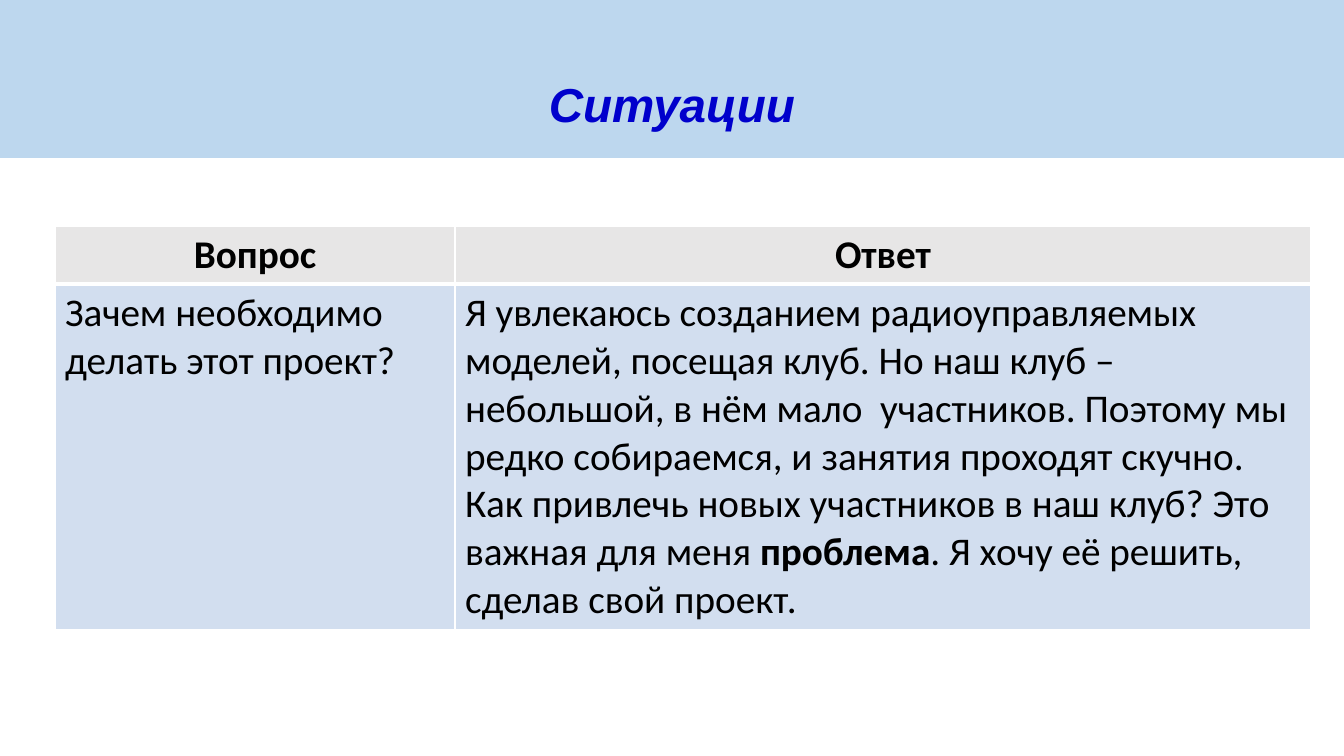
from lxml import etree
from pptx import Presentation
from pptx import util as u
from pptx.dml import color
from pptx.enum import shapes, text
from pptx.oxml import ns

SCALE = 914400 / 100.8
TITLE_FORMAT = {"name": "Arial", "size": u.Pt(34), "bold": True, "italic": True}
CELL_FORMAT = {"name": "Calibri", "size": u.Pt(28)}
BORDERS = {"lnL": 1, "lnR": 1, "lnT": 1, "lnB": 1}
HEADER_BORDERS = {**BORDERS, "lnB": 3}
COLUMNS = [400, 856]
ROWS = [58, 344]
HEADINGS = ["Вопрос", "Ответ"]
QUESTION = [("Зачем необходимо делать этот проект?", False)]
ANSWER = [
    ("Я увлекаюсь созданием радиоуправляемых моделей, посещая клуб. "
     "Но наш клуб – небольшой, в нём мало  участников. Поэтому мы редко "
     "собираемся, и занятия проходят скучно. Как привлечь новых участников "
     "в наш клуб? Это важная для меня ", False),
    ("проблема", True),
    (". Я хочу её решить, сделав свой проект.", False),
]


def px(length):
    """Turn pixels into EMU."""
    return u.Emu(round(length * SCALE))


def rgb(code):
    """Turn a hex string into a colour."""
    return color.RGBColor.from_string(code)


def paint(target, code):
    """Fill a shape or cell with one colour."""
    target.fill.solid()
    target.fill.fore_color.rgb = rgb(code)


def add_span(para, words, code, values):
    """Add a formatted run to a paragraph."""
    span = para.add_run()
    span.text = words
    for name, value in values.items():
        setattr(span.font, name, value)
    span.font.color.rgb = rgb(code)


def add_borders(cell, widths):
    """Draw white borders of the given point widths around a cell."""
    properties = cell._tc.get_or_add_tcPr()
    for side, width in widths.items():
        line = etree.SubElement(properties, ns.qn(f"a:{side}"), w=str(u.Pt(width)))
        fill = etree.SubElement(line, ns.qn("a:solidFill"))
        etree.SubElement(fill, ns.qn("a:srgbClr"), val="FFFFFF")


def title_band(page, left, top, width, height):
    """Place the coloured band with the slide title."""
    box = page.shapes.add_shape(
        shapes.MSO_SHAPE.RECTANGLE, px(left), px(top), px(width), px(height))
    box.shadow.inherit = False
    box.line.fill.background()
    paint(box, "BDD7EE")
    frame = box.text_frame
    frame.vertical_anchor = text.MSO_ANCHOR.TOP
    frame.margin_top = px(75)
    para = frame.paragraphs[0]
    para.alignment = text.PP_ALIGN.CENTER
    add_span(para, "Ситуации", "0000CC", TITLE_FORMAT)


def question_table(page, left, top):
    """Place the table of question and answer."""
    table = page.shapes.add_table(
        len(ROWS), len(COLUMNS), px(left), px(top),
        px(sum(COLUMNS)), px(sum(ROWS))).table
    for column, width in zip(table.columns, COLUMNS):
        column.width = px(width)
    for row, height in zip(table.rows, ROWS):
        row.height = px(height)
    header = [[(heading, True)] for heading in HEADINGS]
    looks = [("E7E6E6", text.PP_ALIGN.CENTER, HEADER_BORDERS),
             ("D2DEEF", text.PP_ALIGN.LEFT, BORDERS)]
    for row, contents, look in zip(table.rows, [header, [QUESTION, ANSWER]], looks):
        fill, alignment, borders = look
        for cell, pieces in zip(row.cells, contents):
            add_borders(cell, borders)
            paint(cell, fill)
            para = cell.text_frame.paragraphs[0]
            para.alignment = alignment
            for words, bold in pieces:
                add_span(para, words, "000000", {**CELL_FORMAT, "bold": bold})


def main():
    """Build the slide and save the deck."""
    deck = Presentation()
    deck.slide_width, deck.slide_height = px(1344), px(756)
    page = deck.slides.add_slide(deck.slide_layouts[6])
    title_band(page, 0, 0, 1344, 158)
    question_table(page, 55, 226)
    deck.save("out.pptx")


if __name__ == "__main__":
    main()
